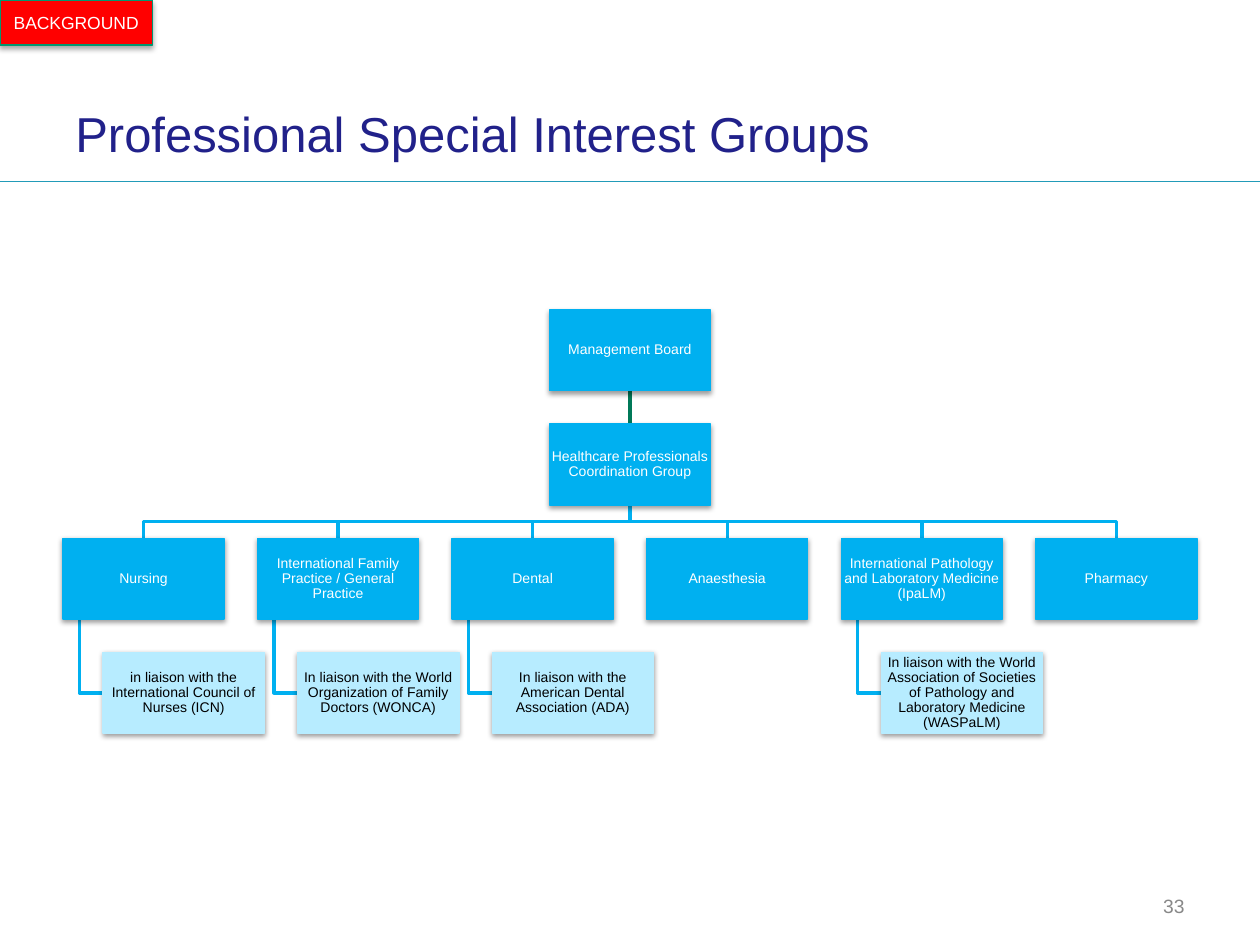
from lxml import etree
from pptx import Presentation
from pptx.dml.color import RGBColor
from pptx.enum.shapes import MSO_CONNECTOR, MSO_SHAPE
from pptx.enum.text import MSO_ANCHOR, PP_ALIGN
from pptx.oxml.ns import qn
from pptx.util import Cm, Pt

RECT = MSO_SHAPE.RECTANGLE
STRAIGHT = MSO_CONNECTOR.STRAIGHT
MIDDLE = MSO_ANCHOR.MIDDLE
LEFT, CENTER, RIGHT = PP_ALIGN.LEFT, PP_ALIGN.CENTER, PP_ALIGN.RIGHT

FONT = "Arial"
BLUE, PALE, GREEN = "00B0F0", "B7ECFF", "007958"
WHITE, BLACK = "FFFFFF", "000000"

BOX_W, BOX_H = 3.25, 1.63
ROW_PITCH = 2.3
LIAISON_INDENT = 0.81
STEM_INDENT = 0.33

BOARD = "Management Board"
COORDINATION = "Healthcare Professionals Coordination Group"
GROUPS = [
    ("Nursing", "in liaison with the International Council of Nurses (ICN)"),
    ("International Family Practice / General Practice",
     "In liaison with the World Organization of Family Doctors (WONCA)"),
    ("Dental", "In liaison with the American Dental Association (ADA)"),
    ("Anaesthesia", None),
    ("International Pathology and Laboratory Medicine (IpaLM)",
     "In liaison with the World Association of Societies of Pathology "
     "and Laboratory Medicine (WASPaLM)"),
    ("Pharmacy", None),
]


def rgb(value):
    return RGBColor.from_string(value)


def write(sp, text, size, color, align, inset_x, inset_y, spacing=None):
    tf = sp.text_frame
    tf.word_wrap = True
    tf.vertical_anchor = MIDDLE
    tf.margin_left = tf.margin_right = Cm(inset_x)
    tf.margin_top = tf.margin_bottom = Cm(inset_y)
    p = tf.paragraphs[0]
    p.text = text
    p.alignment = align
    p.line_spacing = spacing
    p.font.name = FONT
    p.font.size = Pt(size)
    p.font.color.rgb = rgb(color)


def add_label(s, x, y, w, h, text, size, color, align, inset_y):
    sp = s.shapes.add_textbox(Cm(x), Cm(y), Cm(w), Cm(h))
    write(sp, text, size, color, align, 0.25, inset_y)


def add_shadow(sp, opacity, distance):
    sp.shadow.inherit = False
    effects = sp._element.spPr.find(qn("a:effectLst"))
    shadow = etree.SubElement(
        effects, qn("a:outerShdw"), blurRad=str(Pt(3.1)),
        dist=str(Pt(distance)), dir="5400000", rotWithShape="0")
    color = etree.SubElement(shadow, qn("a:srgbClr"), val=BLACK)
    etree.SubElement(color, qn("a:alpha"), val=str(opacity * 1000))


def add_box(s, x, y, w, h, fill, line, opacity, distance):
    sp = s.shapes.add_shape(RECT, Cm(x), Cm(y), Cm(w), Cm(h))
    sp.fill.solid()
    sp.fill.fore_color.rgb = rgb(fill)
    sp.line.color.rgb = rgb(line)
    sp.line.width = Pt(0.75)
    add_shadow(sp, opacity, distance)
    return sp


def add_node(s, x, y, text, fill=BLUE, color=WHITE):
    sp = add_box(s, x, y, BOX_W, BOX_H, fill, fill, 38, 1.6)
    write(sp, text, 8, color, CENTER, 0.03, 0.03, 0.9)


def add_line(s, x1, y1, x2, y2, color, width):
    line = s.shapes.add_connector(STRAIGHT, Cm(x1), Cm(y1), Cm(x2), Cm(y2))
    line.line.color.rgb = rgb(color)
    line.line.width = Pt(width)
    etree.SubElement(line._element.spPr, qn("a:effectLst"))


def add_branch(s, points):
    start, *rest = [(Cm(x), Cm(y)) for x, y in points]
    builder = s.shapes.build_freeform(*start)
    builder.add_line_segments(rest, close=False)
    sp = builder.convert_to_shape()
    sp.fill.background()
    sp.line.color.rgb = rgb(BLUE)
    sp.line.width = Pt(2)
    sp.shadow.inherit = False


def add_header(s, x, y, w, h):
    add_line(s, x, y + h, x + w, y + h, "229BB8", 0.75)
    add_label(s, x + 1.27, y + 1.98, 18.31, 1.42,
              "Professional Special Interest Groups", 28, "21218A", LEFT, 0.25)
    tag = add_box(s, x, y, 3.07, 0.91, "FF0000", "009870", 35, 1.8)
    write(tag, "BACKGROUND", 10, WHITE, CENTER, 0.25, 0.13)


def add_org_chart(s, x, y, w):
    center = x + w / 2
    board_y, coord_y, group_y, liaison_y = [
        y + i * ROW_PITCH for i in range(4)]
    pitch = (w - BOX_W) / (len(GROUPS) - 1)
    columns = [(x + i * pitch, *group) for i, group in enumerate(GROUPS)]
    coord_end = coord_y + BOX_H
    bus_y = (coord_end + group_y) / 2
    liaison_mid = liaison_y + BOX_H / 2

    add_line(s, center, board_y + BOX_H, center, coord_y, GREEN, 2)
    for left, _, liaison in columns:
        mid = left + BOX_W / 2
        add_branch(s, [(center, coord_end), (center, bus_y),
                       (mid, bus_y), (mid, group_y)])
        if liaison:
            stem = left + STEM_INDENT
            add_branch(s, [(stem, group_y + BOX_H), (stem, liaison_mid),
                           (left + LIAISON_INDENT, liaison_mid)])

    add_node(s, center - BOX_W / 2, board_y, BOARD)
    add_node(s, center - BOX_W / 2, coord_y, COORDINATION)
    for left, name, liaison in columns:
        add_node(s, left, group_y, name)
        if liaison:
            add_node(s, left + LIAISON_INDENT, liaison_y, liaison, PALE, BLACK)


def main():
    prs = Presentation()
    prs.slide_width, prs.slide_height = Cm(25.4), Cm(19.05)
    s = prs.slides.add_slide(prs.slide_layouts[6])
    add_header(s, 0, 0, 25.4, 3.66)
    add_org_chart(s, 1.27, 6.25, 22.86)
    add_label(s, 18.21, 17.86, 5.92, 0.81, "33", 11, "888888", RIGHT, 0.13)
    prs.save("out.pptx")


if __name__ == "__main__":
    main()
